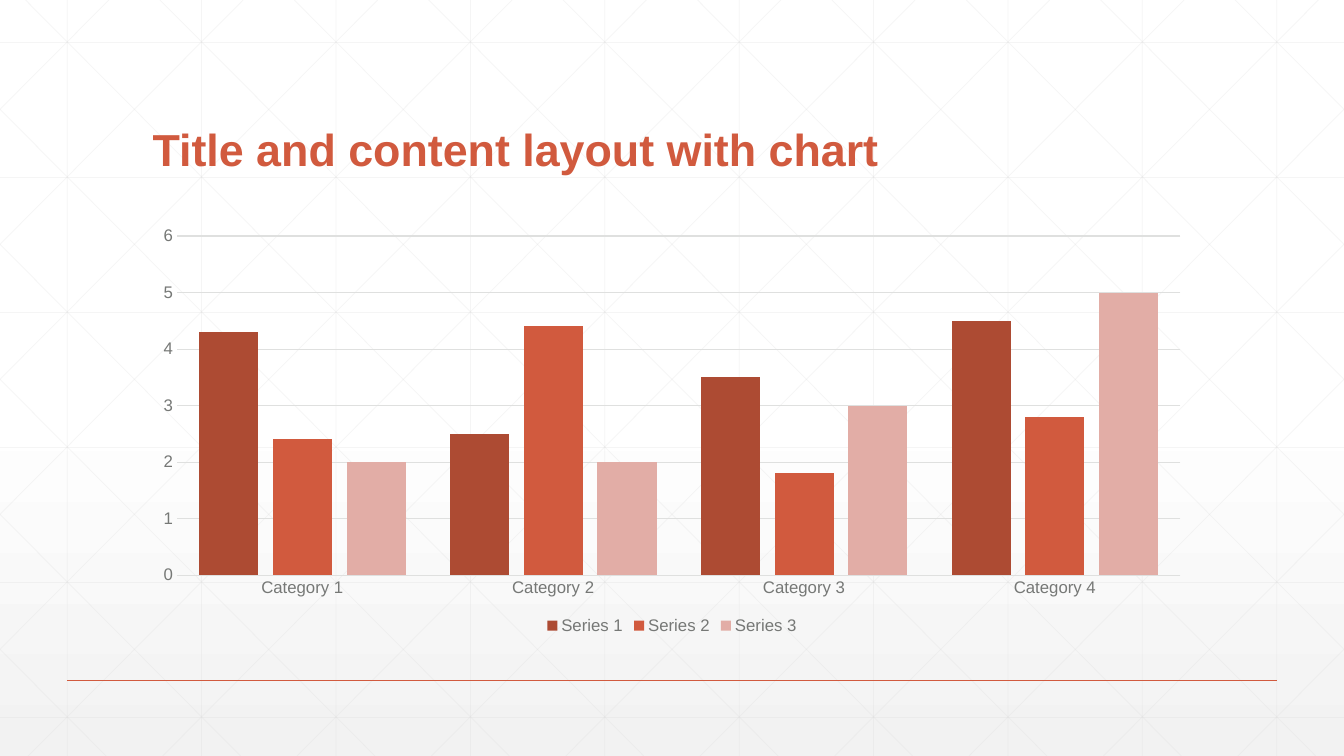
from copy import deepcopy

from lxml import etree
from pptx import Presentation
from pptx.chart.data import CategoryChartData
from pptx.dml.color import RGBColor
from pptx.enum.chart import XL_CHART_TYPE, XL_LEGEND_POSITION, XL_TICK_MARK
from pptx.enum.shapes import MSO_CONNECTOR
from pptx.enum.text import MSO_ANCHOR, MSO_AUTO_SIZE, PP_ALIGN
from pptx.oxml.ns import qn
from pptx.util import Inches, Pt

BARS = XL_CHART_TYPE.COLUMN_CLUSTERED
BELOW = XL_LEGEND_POSITION.BOTTOM
NO_TICK = XL_TICK_MARK.NONE
STRAIGHT = MSO_CONNECTOR.STRAIGHT
BOTTOM = MSO_ANCHOR.BOTTOM
LEFT = PP_ALIGN.LEFT
NO_FIT = MSO_AUTO_SIZE.NONE

WHITE = RGBColor(0xFF, 0xFF, 0xFF)
PALE = RGBColor(0xF2, 0xF2, 0xF2)
MESH = RGBColor(0xD9, 0xD9, 0xD9)
GRID = RGBColor(0xDF, 0xE0, 0xDF)
GREY = RGBColor(0x76, 0x78, 0x76)
RUST = RGBColor(0xAD, 0x4B, 0x33)
CORAL = RGBColor(0xD1, 0x5A, 0x3E)
PINK = RGBColor(0xE2, 0xAD, 0xA6)

WIDE, HIGH = Inches(13.333), Inches(7.5)
COLS, ROWS = 10, 5.6
FONT = "Arial"


class Board:
    """Draws styled elements on one slide, placed by grid columns and rows."""

    def __init__(self, deck):
        self.slide = deck.slides.add_slide(deck.slide_layouts[5])
        self.shapes = self.slide.shapes
        self.col, self.row = WIDE / COLS, HIGH / ROWS

    def place(self, x, y):
        return round(x * self.col), round(y * self.row)

    def shade(self, stops):
        fill = self.slide.background.fill
        fill.gradient()
        fill.gradient_angle = 270
        items = next(self.slide.element.iter(qn("a:gsLst")))
        while len(items) < len(stops):
            items.append(deepcopy(items[0]))
        for stop, (spot, color) in zip(fill.gradient_stops, stops):
            stop.position = spot
            stop.color.rgb = color

    def line(self, start, end, color, width, alpha=None):
        link = self.shapes.add_connector(
            STRAIGHT, *self.place(*start), *self.place(*end))
        link.line.color.rgb = color
        link.line.width = Pt(width)
        props = link.element.spPr
        if alpha is not None:
            tint = next(props.iter(qn("a:srgbClr")))
            etree.SubElement(tint, qn("a:alpha")).set("val", str(alpha * 1000))
        etree.SubElement(props, qn("a:effectLst"))

    def mesh(self):
        style = MESH, 0.5, 25
        for step in range(COLS):
            self.line((step + 0.5, 0), (step + 0.5, ROWS), *style)
        for step in range(6):
            self.line((0, step + 0.315), (COLS, step + 0.315), *style)
        for step in range(-5, COLS):
            edge = step + 0.19
            top, low = max(0, -edge), min(ROWS, COLS - edge)
            self.line((edge + top, top), (edge + low, low), *style)
            self.line((COLS - edge - top, top), (COLS - edge - low, low), *style)

    def title(self, text, x, y, w, h):
        box = self.shapes.title
        self.shapes.element.append(box.element)
        box.left, box.top = self.place(x, y)
        box.width, box.height = self.place(w, h)
        frame = box.text_frame
        frame.text = text
        frame.word_wrap = True
        frame.auto_size = NO_FIT
        frame.vertical_anchor = BOTTOM
        para = frame.paragraphs[0]
        para.alignment = LEFT
        para.line_spacing = 0.9
        self.style(para.runs[0].font, 32, CORAL, True)

    def style(self, font, size, color, bold=False):
        font.name = FONT
        font.size = Pt(size)
        font.bold = bold
        font.color.rgb = color

    def chart(self, names, series, x, y, w, h):
        data = CategoryChartData()
        data.categories = names
        for name, values, _ in series:
            data.add_series(name, values)
        chart = self.shapes.add_chart(
            BARS, *self.place(x, y), *self.place(w, h), data).chart
        self.style(chart.font, 12, GREY)
        chart.has_title = False
        chart.has_legend = True
        chart.legend.position = BELOW
        chart.legend.include_in_layout = False
        self.style(chart.legend.font, 12, GREY)
        plot = chart.plots[0]
        plot.vary_by_categories = False
        plot.gap_width = 75
        plot.overlap = -25
        for bar, (_, _, color) in zip(plot.series, series):
            bar.format.fill.solid()
            bar.format.fill.fore_color.rgb = color
            bar.invert_if_negative = False
        for axis in (chart.category_axis, chart.value_axis):
            axis.major_tick_mark = axis.minor_tick_mark = NO_TICK
            self.style(axis.tick_labels.font, 12, GREY)
        scale = chart.value_axis
        scale.minimum_scale, scale.maximum_scale = 0, 6
        scale.major_unit = 1
        scale.format.line.fill.background()
        for part in (chart.category_axis, scale.major_gridlines):
            part.format.line.color.rgb = GRID
            part.format.line.width = Pt(0.75)


def main():
    deck = Presentation()
    deck.slide_width, deck.slide_height = WIDE, HIGH
    board = Board(deck)
    board.shade([(0, WHITE), (0.53, WHITE), (1, PALE)])
    board.mesh()
    board.line((0.5, 5.04), (9.5, 5.04), CORAL, 1)
    board.title("Title and content layout with chart", 1.06, 0.41, 7.88, 0.93)
    board.chart(
        [f"Category {number}" for number in range(1, 5)],
        [("Series 1", (4.3, 2.5, 3.5, 4.5), RUST),
         ("Series 2", (2.4, 4.4, 1.8, 2.8), CORAL),
         ("Series 3", (2, 2, 3, 5), PINK)],
        1.06, 1.62, 7.88, 3.11)
    deck.save("out.pptx")


if __name__ == "__main__":
    main()
